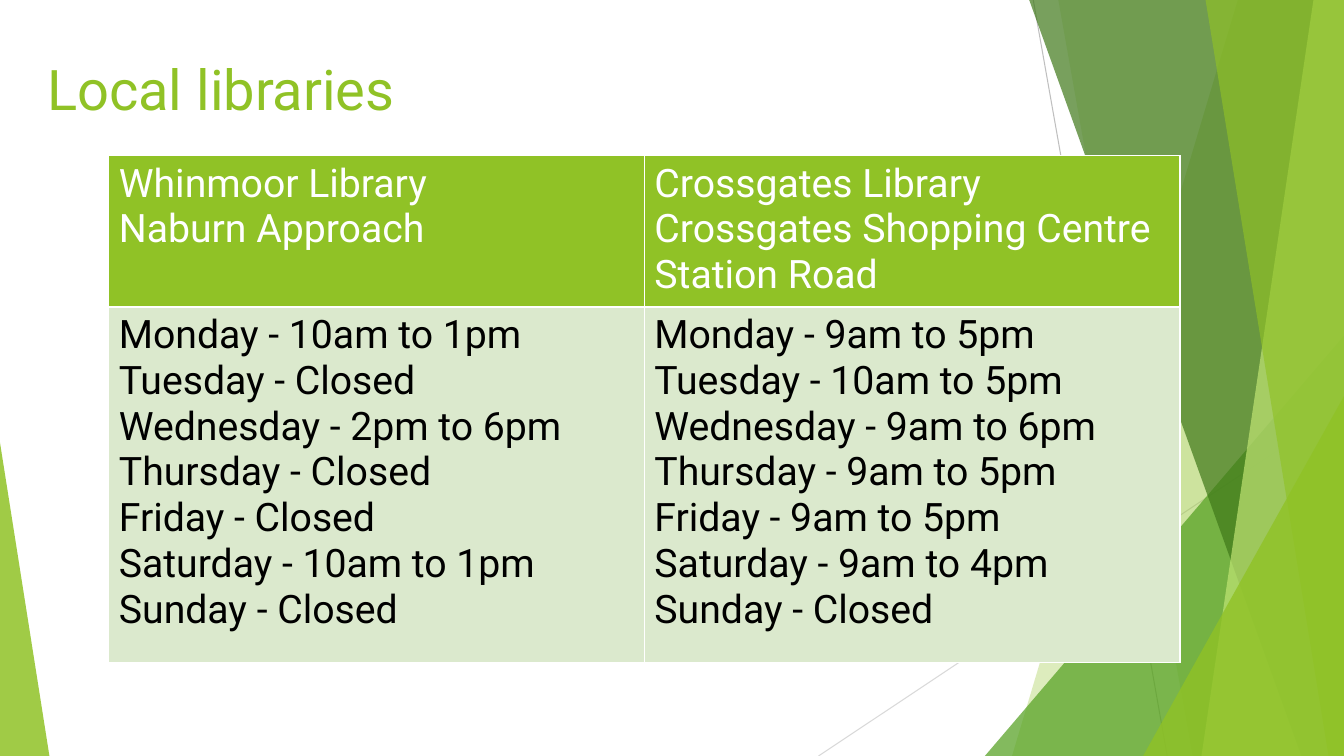
from lxml import etree
from pptx import Presentation
from pptx import util as u
from pptx.dml.color import RGBColor
from pptx.enum import shapes, text
from pptx.oxml import ns

GREEN, WHITE, BLACK, PALE = "90C226", "FFFFFF", "000000", "DBE9CD"


def paint(fill, colour, opacity=100):
    fill.solid()
    fill.fore_color.rgb = RGBColor.from_string(colour)
    if opacity < 100:
        srgb = fill._xPr.find(".//" + ns.qn("a:srgbClr"))
        etree.SubElement(srgb, ns.qn("a:alpha"), val=str(opacity * 1000))


def write(frame, lines, size, colour):
    frame.text = "\n".join(lines)
    for paragraph in frame.paragraphs:
        paragraph.alignment = text.PP_ALIGN.LEFT
        for run in paragraph.runs:
            run.font.name = "Roboto"
            run.font.size = u.Pt(size)
            run.font.bold = False
            paint(run.font.fill, colour)


deck = Presentation()
deck.slide_width, deck.slide_height = u.Inches(13.333), u.Inches(7.5)
slide = deck.slides.add_slide(deck.slide_layouts[6])
col, row = deck.slide_width / 100, deck.slide_height / 100

rays = [(76.88, 0, 86.85, 100, "BFBFBF"), (100, 53.73, 60.9, 100, "D9D9D9")]
for x1, y1, x2, y2, grey in rays:
    ray = slide.shapes.add_connector(
        shapes.MSO_CONNECTOR.STRAIGHT,
        int(x1 * col), int(y1 * row), int(x2 * col), int(y2 * row))
    paint(ray.line.fill, grey)
    ray.line.width = u.Pt(0.75)
    etree.SubElement(ray._element.spPr, ns.qn("a:effectLst"))

facets = [
    ("band", 92.1, 75.3, GREEN, 30),
    ("band", 78.75, 88.73, GREEN, 20),
    ("right peak", 73.28, 44.4, "54A021", 72),
    ("band", 76.58, 96.83, "3F7819", 70),
    ("band", 97.73, 89.4, "C0E474", 70),
    ("band", 89.7, 98.85, GREEN, 65),
    ("right peak", 85.05, 52.4, GREEN, 80),
    ("left peak", 3.68, 58.53, GREEN, 85),
]
for kind, first, second, colour, opacity in facets:
    if kind == "band":
        outline = slide.shapes.build_freeform(int(first * col), 0)
        corners = [(100, 0), (100, 100), (second, 100)]
        outline.add_line_segments([(int(x * col), int(y * row)) for x, y in corners])
        facet = outline.convert_to_shape()
    else:
        left, right = (first, 100) if kind == "right peak" else (0, first)
        facet = slide.shapes.add_shape(
            shapes.MSO_SHAPE.ISOSCELES_TRIANGLE, int(left * col), int(second * row),
            int((right - left) * col), int((100 - second) * row))
        facet.adjustments[0] = 1 if kind == "right peak" else 0
    paint(facet.fill, colour, opacity)
    facet.line.fill.background()
    facet.shadow.inherit = False

title = slide.shapes.add_textbox(
    int(2.78 * col), 0, int(80.33 * col), int(16.8 * row)).text_frame
title.word_wrap = True
title.vertical_anchor = text.MSO_ANCHOR.BOTTOM
write(title, ["Local libraries"], 40, GREEN)

days = ["Monday", "Tuesday", "Wednesday", "Thursday", "Friday", "Saturday", "Sunday"]
libraries = [
    (["Whinmoor Library", "Naburn Approach"],
     ["10am to 1pm", "Closed", "2pm to 6pm", "Closed", "Closed", "10am to 1pm", "Closed"]),
    (["Crossgates Library", "Crossgates Shopping Centre", "Station Road"],
     ["9am to 5pm", "10am to 5pm", "9am to 6pm", "9am to 5pm", "9am to 5pm",
      "9am to 4pm", "Closed"]),
]
timetable = slide.shapes.add_table(
    2, len(libraries), int(8.1 * col), int(20.6 * row),
    int(79.7 * col), int(66.67 * row)).table
timetable.rows[0].height, timetable.rows[1].height = int(19.6 * row), int(47.07 * row)

for column, (address, hours) in enumerate(libraries):
    opening = [f"{day} - {hour}" for day, hour in zip(days, hours)]
    looks = [(address, WHITE, GREEN), (opening, BLACK, PALE)]
    for line, (lines, ink, back) in enumerate(looks):
        cell = timetable.cell(line, column)
        write(cell.text_frame, lines, 28, ink)
        properties = cell._tc.get_or_add_tcPr()
        for side in "LRTB":
            border = etree.SubElement(properties, ns.qn("a:ln" + side), w=str(u.Pt(1)))
            solid = etree.SubElement(border, ns.qn("a:solidFill"))
            etree.SubElement(solid, ns.qn("a:srgbClr"), val=WHITE)
        paint(cell.fill, back)

deck.save("out.pptx")
